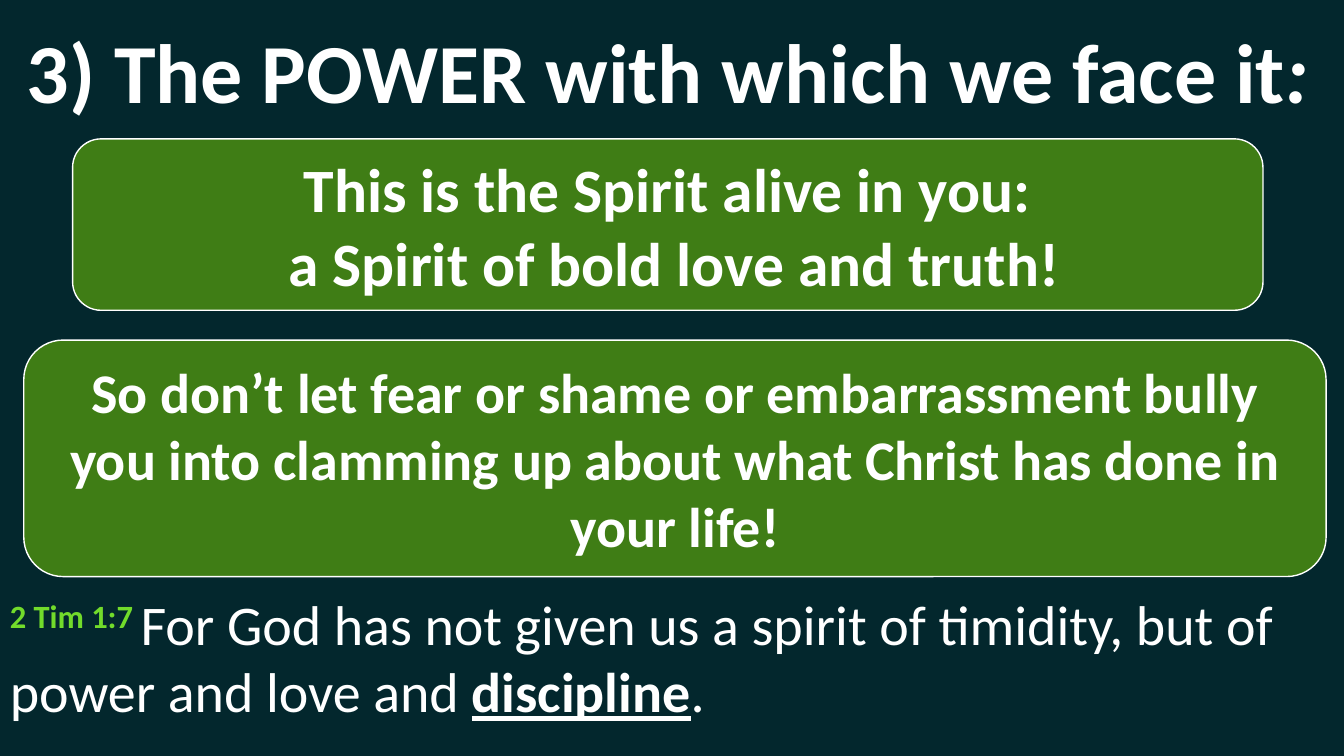
import pptx
import pptx.util
import pptx.dml.color
import pptx.enum.shapes
import pptx.enum.text

COLORS = {
    "background": "03272D",
    "panel": "3F7D15",
    "reference": "72DB2B",
    "white": "FFFFFF",
}
ALIGN = pptx.enum.text.PP_ALIGN
ANCHOR = pptx.enum.text.MSO_ANCHOR
SHAPE = pptx.enum.shapes.MSO_SHAPE


def color(name):
    return pptx.dml.color.RGBColor.from_string(COLORS[name])


class SlideBuilder:
    """Holds the shared style and the current slide."""

    font_name = "Calibri"

    def __init__(self, presentation):
        title_only = presentation.slide_layouts[5]
        self.slide = presentation.slides.add_slide(title_only)
        fill = self.slide.background.fill
        fill.solid()
        fill.fore_color.rgb = color("background")

    def add_text(self, shape, paragraphs, size, align, anchor):
        """Fill a shape with paragraphs, each a list of (text, format) runs."""
        frame = shape.text_frame
        frame_format = {
            "word_wrap": True,
            "auto_size": pptx.enum.text.MSO_AUTO_SIZE.NONE,
            "vertical_anchor": anchor,
        }
        for name, value in frame_format.items():
            setattr(frame, name, value)
        for index, runs in enumerate(paragraphs):
            paragraph = frame.add_paragraph() if index else frame.paragraphs[0]
            paragraph.alignment = align
            for text, changes in runs:
                self.add_run(paragraph, text, size, **changes)

    def add_run(self, paragraph, text, size, ink="white", raised=False, **changes):
        run = paragraph.add_run()
        run.text = text
        font_format = {
            "name": self.font_name,
            "size": pptx.util.Pt(size),
            "bold": True,
            **changes,
        }
        for name, value in font_format.items():
            setattr(run.font, name, value)
        run.font.color.rgb = color(ink)
        if raised:
            run._r.get_or_add_rPr().set("baseline", "30000")

    def title(self, box, runs, size):
        shape = self.slide.shapes.title
        for name, value in zip(("left", "top", "width", "height"), box):
            setattr(shape, name, pptx.util.Cm(value))
        self.add_text(shape, [runs], size, ALIGN.CENTER, ANCHOR.TOP)

    def block(self, kind, box, fill, paragraphs, size, align, outline=None):
        shape = self.slide.shapes.add_shape(kind, *map(pptx.util.Cm, box))
        shape.shadow.inherit = False
        shape.fill.solid()
        shape.fill.fore_color.rgb = color(fill)
        if outline:
            shape.line.color.rgb = color(outline)
            shape.line.width = pptx.util.Pt(1)
        else:
            shape.line.fill.background()
        self.add_text(shape, paragraphs, size, align, ANCHOR.MIDDLE)

    def panel(self, box, lines, size):
        paragraphs = [[(line, {})] for line in lines]
        self.block(SHAPE.ROUNDED_RECTANGLE, box, "panel", paragraphs, size,
                   ALIGN.CENTER, outline="white")

    def verse(self, box, runs, size):
        self.block(SHAPE.RECTANGLE, box, "background", [runs], size, ALIGN.LEFT)


def main():
    presentation = pptx.Presentation()
    presentation.slide_width = pptx.util.Cm(33.87)
    presentation.slide_height = pptx.util.Cm(19.05)
    builder = SlideBuilder(presentation)

    # Heading
    builder.title((0.23, 0.36, 33.2, 2.82), [
        ("3) The POWER with which we face it", {}),
        (":", {"italic": True}),
    ], 60)

    # Bible verse along the bottom
    builder.verse((0, 14.05, 33.87, 5), [
        ("2 Tim 1:7 ", {"ink": "reference", "raised": True}),
        ("For God has not given us a spirit of timidity, "
         "but of power and love and ", {"bold": False}),
        ("discipline", {"underline": True}),
        (".", {"bold": False}),
    ], 40)

    # Green message panels
    builder.panel((1.83, 3.5, 30, 4.32), [
        "This is the Spirit alive in you:",
        " a Spirit of bold love and truth!",
    ], 44)
    builder.panel((0.6, 8.57, 32.82, 5.96), [
        "So don’t let fear or shame or embarrassment bully you into "
        "clamming up about what Christ has done in your life!",
    ], 40)

    presentation.save("out.pptx")


if __name__ == "__main__":
    main()
